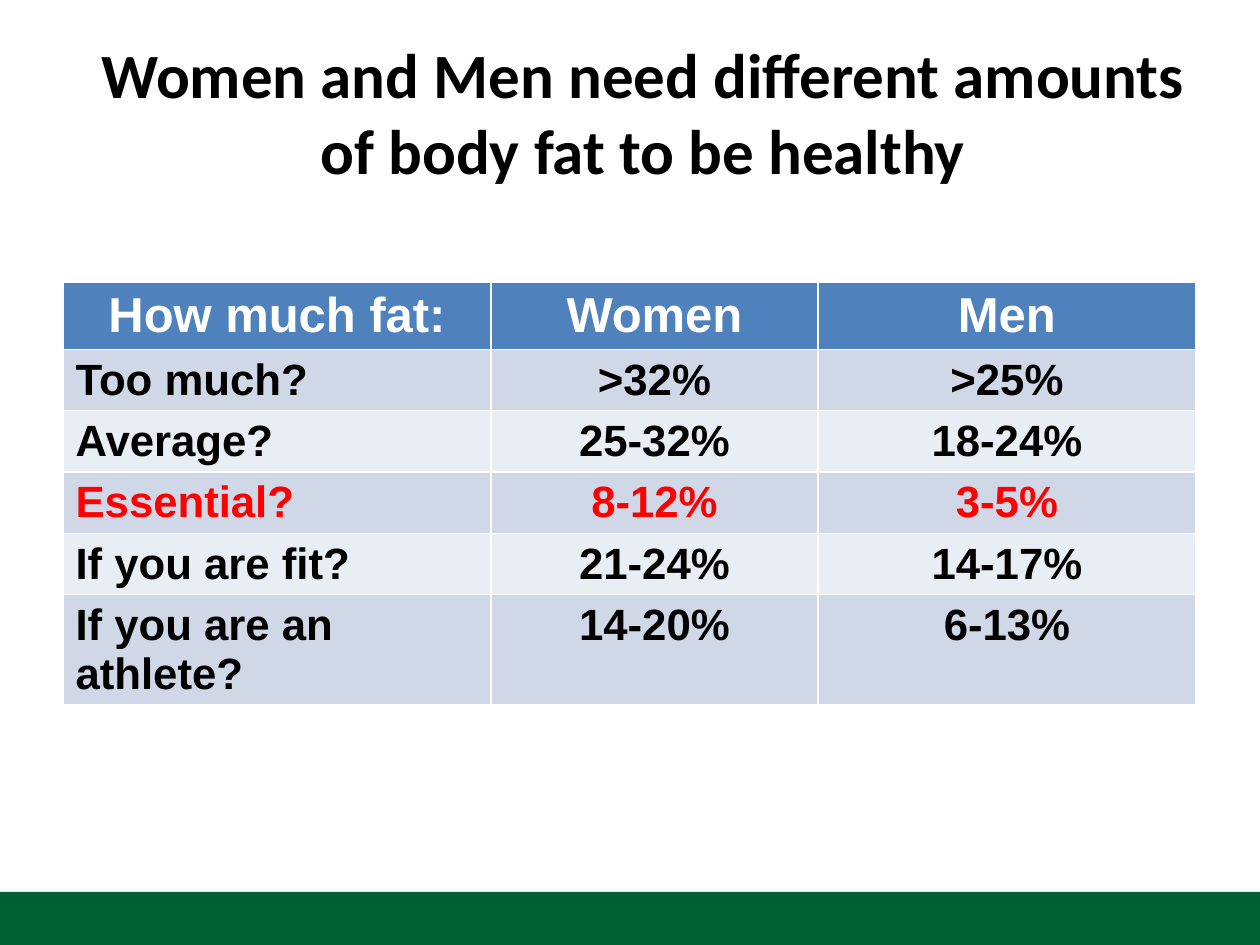
from dataclasses import dataclass

import pptx
import pptx.dml.color
import pptx.enum.shapes
import pptx.enum.text
import pptx.util

SCALE = 914400 / 126
WIDTH, HEIGHT = 1260, 945
COLORS = {
    "black": "000000",
    "white": "FFFFFF",
    "red": "FF0000",
    "green": "006036",
    "head": "4F81BD",
    "dark": "D0D8E8",
    "light": "E9EDF4",
}
ALIGN = pptx.enum.text.PP_ALIGN


@dataclass
class Row:
    texts: tuple[str, str, str]
    fill: str
    color: str = "black"
    size: int = 25
    first: ALIGN = ALIGN.LEFT


ROWS = [
    Row(("How much fat:", "Women", "Men"), "head", "white", 28, ALIGN.CENTER),
    Row(("Too much?", ">32%", ">25%"), "dark"),
    Row(("Average?", "25-32%", "18-24%"), "light"),
    Row(("Essential?", "8-12%", "3-5%"), "dark", "red"),
    Row(("If you are fit?", "21-24%", "14-17%"), "light"),
    Row(("If you are an athlete?", "14-20%", "6-13%"), "dark"),
]
COLS = (428, 327, 378)
ROW_HEIGHT = 52


def px(count: int) -> int:
    return round(count * SCALE)


def rgb(name: str) -> pptx.dml.color.RGBColor:
    return pptx.dml.color.RGBColor.from_string(COLORS[name])


def write(frame, text: str, font: str, size: int, color: str, align: ALIGN) -> None:
    frame.text = text
    line = frame.paragraphs[0]
    line.alignment = align
    face = line.runs[0].font
    face.name, face.size, face.bold = font, pptx.util.Pt(size), True
    face.color.rgb = rgb(color)


def draw_bar(slide) -> None:
    bar = slide.shapes.add_shape(
        pptx.enum.shapes.MSO_SHAPE.RECTANGLE, 0, px(892), px(WIDTH), px(HEIGHT - 892)
    )
    bar.shadow.inherit = False
    bar.fill.solid()
    bar.fill.fore_color.rgb = rgb("green")
    bar.line.fill.background()


def draw_title(slide) -> None:
    title = slide.shapes.title
    title.left, title.top = px(76), px(33)
    title.width, title.height = px(1134), px(157)
    frame = title.text_frame
    frame.word_wrap = True
    frame.vertical_anchor = pptx.enum.text.MSO_ANCHOR.MIDDLE
    write(frame, "Women and Men need different amounts of body fat to be healthy",
          "Calibri", 36, "black", ALIGN.CENTER)


def draw_table(slide, rows: list[Row]) -> None:
    table = slide.shapes.add_table(
        len(rows), len(COLS), px(63), px(282), px(sum(COLS)), px(ROW_HEIGHT * len(rows))
    ).table
    for col, width in zip(table.columns, COLS):
        col.width = px(width)
    for line, row in zip(table.rows, rows):
        line.height = px(ROW_HEIGHT)
        for spot, (cell, text) in enumerate(zip(line.cells, row.texts)):
            cell.fill.solid()
            cell.fill.fore_color.rgb = rgb(row.fill)
            align = ALIGN.CENTER if spot else row.first
            write(cell.text_frame, text, "Arial", row.size, row.color, align)


def main() -> None:
    deck = pptx.Presentation()
    deck.slide_width, deck.slide_height = px(WIDTH), px(HEIGHT)
    slide = deck.slides.add_slide(deck.slide_layouts.get_by_name("Title Only"))
    draw_bar(slide)
    draw_title(slide)
    draw_table(slide, ROWS)
    deck.save("out.pptx")


if __name__ == "__main__":
    main()
